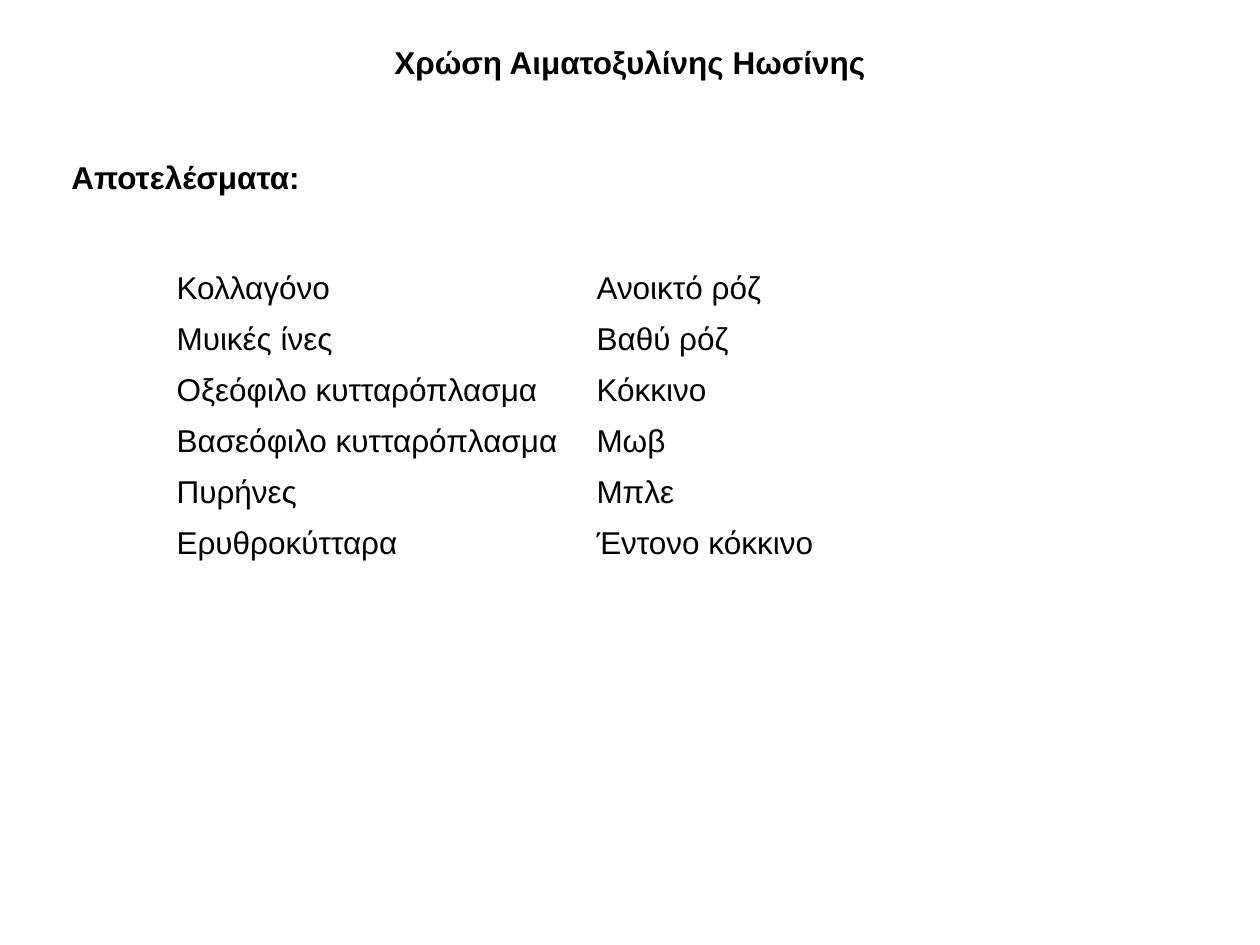
from pptx import Presentation
from pptx.dml.color import RGBColor
from pptx.enum.text import MSO_AUTO_SIZE, PP_ALIGN
from pptx.util import Pt

EMU_PER_PX = 914400 / 126
BODY = {"name": "Arial", "size": Pt(18), "bold": False}
HEADING = {**BODY, "bold": True}
STAINING_RESULTS = [
    ("Κολλαγόνο", "Ανοικτό ρόζ"),
    ("Μυικές ίνες", "Βαθύ ρόζ"),
    ("Οξεόφιλο κυτταρόπλασμα", "Κόκκινο"),
    ("Βασεόφιλο κυτταρόπλασμα", "Μωβ"),
    ("Πυρήνες", "Μπλε"),
    ("Ερυθροκύτταρα", "Έντονο κόκκινο"),
]


def px(length):
    return round(length * EMU_PER_PX)


def color(hex_string):
    return RGBColor.from_string(hex_string)


def write(paragraph, wording, font_format, **paragraph_format):
    run = paragraph.add_run()
    run.text = wording
    for target, values in ((run.font, font_format), (paragraph, paragraph_format)):
        for attribute, value in values.items():
            setattr(target, attribute, value)
    run.font.color.rgb = color("000000")


def add_headings(slide, left, top, width, height):
    headings = slide.shapes.add_textbox(px(left), px(top), px(width), px(height)).text_frame
    headings.word_wrap = True
    headings.auto_size = MSO_AUTO_SIZE.SHAPE_TO_FIT_TEXT
    write(headings.paragraphs[0], "Χρώση Αιματοξυλίνης Ηωσίνης", HEADING,
          alignment=PP_ALIGN.CENTER)
    write(headings.add_paragraph(), "Αποτελέσματα:", HEADING,
          alignment=PP_ALIGN.LEFT, space_before=Pt(44))


def add_results(slide, results, left, top, column_width, row_height):
    columns = len(results[0])
    table = slide.shapes.add_table(
        len(results), columns, px(left), px(top),
        px(column_width * columns), px(row_height * len(results))).table
    table.first_row = False
    table.horz_banding = False
    for row, wordings in zip(table.rows, results):
        for cell, wording in zip(row.cells, wordings):
            cell.fill.background()
            write(cell.text_frame.paragraphs[0], wording, BODY)


def main():
    presentation = Presentation()
    presentation.slide_width = px(1260)
    presentation.slide_height = px(945)
    slide = presentation.slides.add_slide(presentation.slide_layouts[6])
    slide.background.fill.solid()
    slide.background.fill.fore_color.rgb = color("FFFFFF")
    add_headings(slide, 59, 37, 1142, 204)
    add_results(slide, STAINING_RESULTS, 164, 265, 420, 51)
    presentation.save("out.pptx")


if __name__ == "__main__":
    main()
